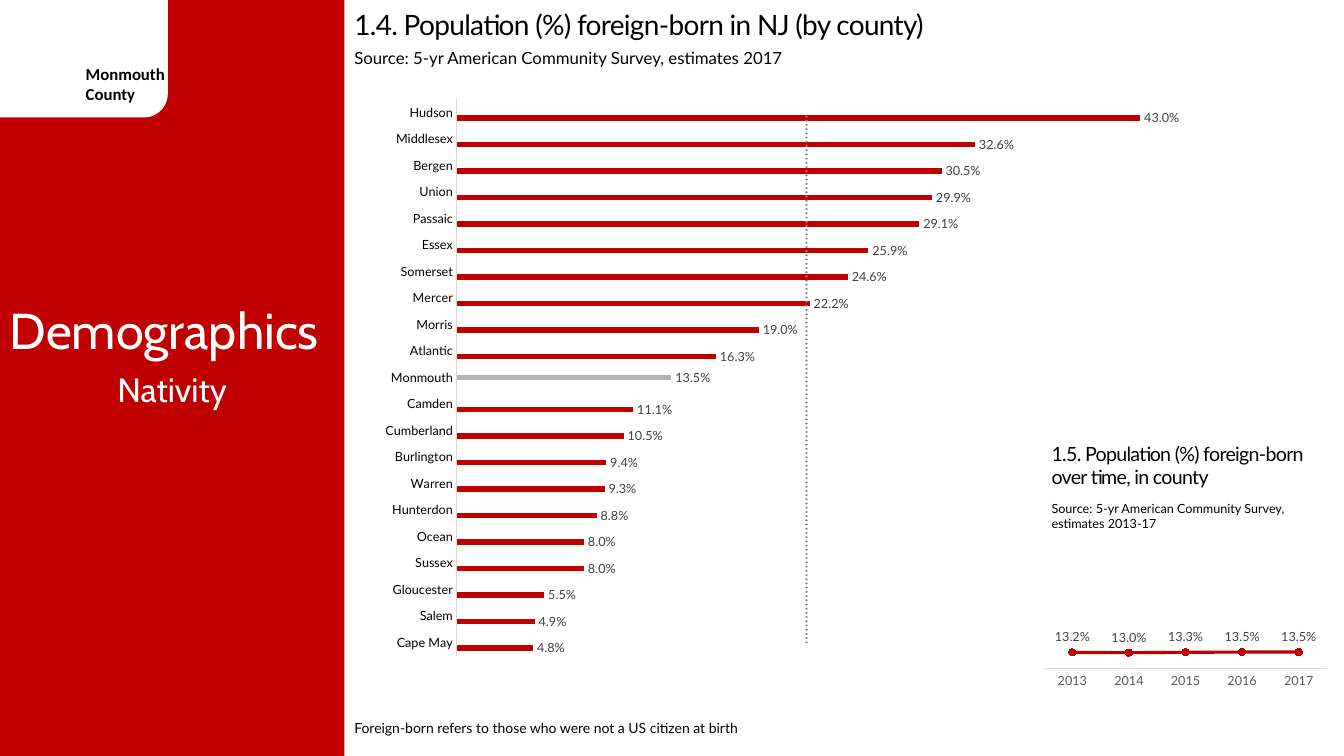
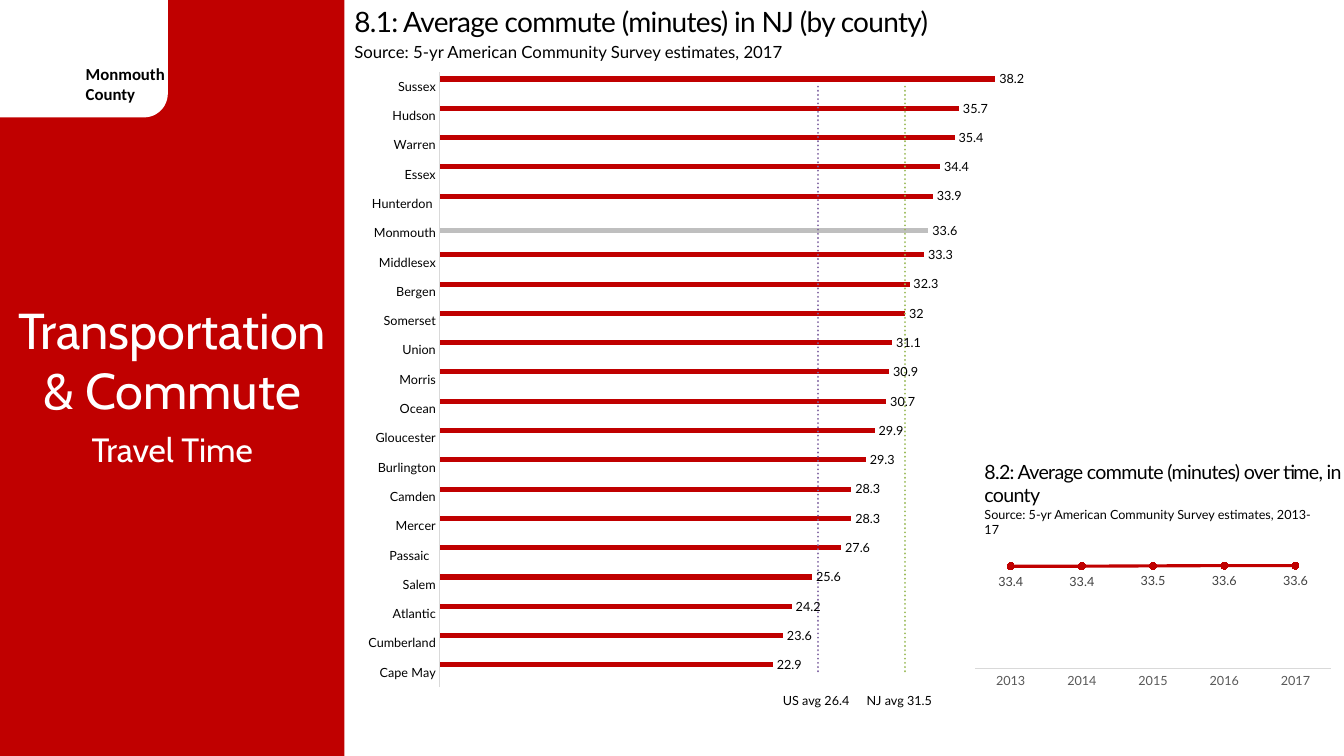
from collections import namedtuple

from lxml import etree
from pptx import Presentation
from pptx.chart.data import CategoryChartData
from pptx.dml.color import RGBColor
from pptx.enum.chart import XL_CHART_TYPE, XL_LABEL_POSITION, XL_MARKER_STYLE, XL_TICK_MARK
from pptx.enum.shapes import MSO_SHAPE
from pptx.enum.text import PP_ALIGN
from pptx.oxml import parse_xml
from pptx.oxml.ns import nsdecls, qn
from pptx.util import Cm, Pt

LEFT, CENTER = PP_ALIGN.LEFT, PP_ALIGN.CENTER
BAR, LINE = XL_CHART_TYPE.BAR_CLUSTERED, XL_CHART_TYPE.LINE_MARKERS
OUTSIDE, ABOVE, BELOW = (XL_LABEL_POSITION.OUTSIDE_END, XL_LABEL_POSITION.ABOVE,
                         XL_LABEL_POSITION.BELOW)
CIRCLE, NO_TICKS = XL_MARKER_STYLE.CIRCLE, XL_TICK_MARK.NONE
RECTANGLE, ROUNDED = MSO_SHAPE.RECTANGLE, MSO_SHAPE.ROUNDED_RECTANGLE

RED, WHITE, BLACK = "C00000", "FFFFFF", "000000"
LABEL_GRAY, YEAR_GRAY, AXIS_GRAY = "404040", "595959", "D9D9D9"
BODY_FONT, TOPIC_FONT, BADGE_FONT = "Lato", "Cabin", "Calibri"
SLIDE_WIDTH, SLIDE_HEIGHT, SIDEBAR_WIDTH = 33.87, 19.05, 8.68
YEARS = ["2013", "2014", "2015", "2016", "2017"]
FOCUS_COUNTY = "Monmouth"

Average = namedtuple("Average", "value color bar_fill")


class Box(namedtuple("Box", "left top width height")):
    """A region in centimetres."""

    def inner(self, left, top, width, height):
        return Box(self.left + left, self.top + top, width, height)

    def lengths(self):
        return [Cm(value) for value in self]


def color(hex_string):
    return RGBColor.from_string(hex_string)


def style_font(font, size, hex_color, name=BODY_FONT, bold=False):
    font.size, font.name, font.bold = Pt(size), name, bold
    font.color.rgb = color(hex_color)


def add_text(page, box, text, size, hex_color=BLACK, font=BODY_FONT, bold=False,
             align=LEFT, spacing=None):
    frame = page.shapes.add_textbox(*box.lengths()).text_frame
    frame.word_wrap = True
    frame.text = text
    para = frame.paragraphs[0]
    para.alignment = align
    for span in para.runs:
        style_font(span.font, size, hex_color, font, bold)
        if spacing is not None:
            span.font._element.set("spc", str(int(spacing * 100)))


def add_block(page, kind, box, fill):
    block = page.shapes.add_shape(kind, *box.lengths())
    block.shadow.inherit = False
    block.fill.solid()
    block.fill.fore_color.rgb = color(fill)
    block.line.fill.background()


# Chart helpers
def set_plot_layout(chart, layout):
    plot_area = chart._chartSpace.find(".//" + qn("c:plotArea"))
    previous = plot_area.find(qn("c:layout"))
    if previous is not None:
        plot_area.remove(previous)
    element = parse_xml(f"<c:layout {nsdecls('c')}><c:manualLayout/></c:layout>")
    settings = [("layoutTarget", "inner"), ("xMode", "edge"), ("yMode", "edge")]
    settings += zip("xywh", layout)
    for name, value in settings:
        etree.SubElement(element[0], qn("c:" + name)).set("val", str(value))
    plot_area.insert(0, element)


def add_trendline(series, hex_color):
    trend = parse_xml(
        f'<c:trendline {nsdecls("c", "a")}><c:spPr><a:ln w="{Pt(1.5)}" cap="rnd"><a:solidFill>'
        f'<a:srgbClr val="{hex_color}"/></a:solidFill><a:prstDash val="sysDot"/></a:ln></c:spPr>'
        '<c:trendlineType val="linear"/><c:dispRSqr val="0"/><c:dispEq val="0"/></c:trendline>')
    series._element.find(qn("c:cat")).addprevious(trend)


def add_labels(series, number_format, position, hex_color):
    labels = series.data_labels
    labels.show_value = True
    labels.number_format, labels.number_format_is_linked = number_format, False
    labels.position = position
    style_font(labels.font, 9, hex_color)


def add_chart(page, box, kind, categories, rows, maximum, layout, category_color):
    data = CategoryChartData()
    data.categories = categories
    for name, values in rows:
        data.add_series(name, values)
    chart = page.shapes.add_chart(kind, *box.lengths(), data).chart
    chart.has_title = chart.has_legend = False
    style_font(chart.font, 10, BLACK, BADGE_FONT)
    chart.plots[0].vary_by_categories = False
    values_axis, axis = chart.value_axis, chart.category_axis
    values_axis.minimum_scale, values_axis.maximum_scale = 0, maximum
    values_axis.has_major_gridlines = values_axis.visible = False
    axis.major_tick_mark = axis.minor_tick_mark = NO_TICKS
    axis.format.line.color.rgb = color(AXIS_GRAY)
    axis.format.line.width = Pt(0.75)
    style_font(axis.tick_labels.font, 9, category_color)
    set_plot_layout(chart, layout)
    return chart


def add_county_chart(page, box, name, counties, averages, maximum, layout,
                     number_format, label_color, focus_color, reverse=False):
    categories = [county for county, _ in counties]
    rows = [
        (name, [None if county == FOCUS_COUNTY else value for county, value in counties]),
        ("Series 2", [value if county == FOCUS_COUNTY else None for county, value in counties])]
    rows += [(f"Series {number}", [average.value] * len(counties))
             for number, average in enumerate(averages, 3)]
    chart = add_chart(page, box, BAR, categories, rows, maximum, layout, BLACK)
    chart.category_axis.reverse_order = reverse
    plot = chart.plots[0]
    plot.gap_width, plot.overlap = 182, 0
    bars = list(plot.series)
    fills = [RED, focus_color] + [average.bar_fill for average in averages]
    for series, fill in zip(bars, fills):
        series.invert_if_negative = False
        if fill is None:
            series.format.fill.background()
        else:
            series.format.fill.solid()
            series.format.fill.fore_color.rgb = color(fill)
    for series in bars[:2]:
        add_labels(series, number_format, OUTSIDE, label_color)
    for series, average in zip(bars[2:], averages):
        add_trendline(series, average.color)


def add_year_chart(page, box, values, maximum, layout, number_format, position):
    chart = add_chart(page, box, LINE, YEARS, [("Series 1", values)], maximum, layout, YEAR_GRAY)
    series = chart.plots[0].series[0]
    series.smooth = False
    series.format.line.color.rgb = color(RED)
    series.format.line.width = Pt(2.25)
    marker = series.marker
    marker.style, marker.size = CIRCLE, 5
    marker.format.fill.solid()
    marker.format.fill.fore_color.rgb = color(RED)
    marker.format.line.color.rgb = color(RED)
    add_labels(series, number_format, position, LABEL_GRAY)


# Regions
def add_sidebar(page, box, topic, subtopic, subtopic_top, align):
    add_block(page, RECTANGLE, box, RED)
    add_block(page, ROUNDED, box.inner(-0.85, -0.64, 5.08, 3.6), WHITE)
    add_text(page, box.inner(1.91, 1.48, 2.74, 1.27), "Monmouth County", 12,
             font=BADGE_FONT, bold=True)
    add_text(page, box.inner(0, 7.41, box.width, subtopic_top - 7.41), topic, 36, WHITE,
             TOPIC_FONT, align=align)
    add_text(page, box.inner(0, subtopic_top, box.width, 1.27), subtopic, 24, WHITE,
             TOPIC_FONT, align=CENTER)


def add_county_heading(page, box, title, source, source_top):
    add_text(page, box.inner(0, 0, box.width, 1.12), title, 20, spacing=-0.5)
    add_text(page, box.inner(0, source_top, box.width, 0.76), source, 12)


def add_year_heading(page, box, title, source, source_top, source_width):
    add_text(page, box.inner(0, 0, box.width, 1.47), title, 14, spacing=-0.5)
    add_text(page, box.inner(0, source_top, source_width, 1.02), source, 9)


# Slides
def build_nativity(page, box):
    add_sidebar(page, box.inner(0, 0, SIDEBAR_WIDTH, box.height),
                "Demographics", "Nativity", 9.17, LEFT)
    main = box.inner(SIDEBAR_WIDTH, 0.06, 22.86, 18.97)
    add_county_heading(page, main, "1.4. Population (%) foreign-born in NJ (by county)",
                       "Source: 5-yr American Community Survey, estimates 2017", 1.01)
    years = box.inner(26.25, 11, 7.62, 6.62)
    add_year_heading(page, years, "1.5. Population (%) foreign-born over time, in county",
                     "Source: 5-yr American Community Survey, estimates 2013-17", 1.5, 7.62)
    add_year_chart(page, years.inner(-0.22, 1.92, 7.62, 4.72),
                   [0.132, 0.13, 0.133, 0.135, 0.135], 1,
                   (0.037, 0.183, 0.936, 0.649), "0.0%", ABOVE)
    counties = [
        ("Cape May", 0.048), ("Salem", 0.049), ("Gloucester", 0.055), ("Sussex", 0.08),
        ("Ocean", 0.08), ("Hunterdon", 0.088), ("Warren", 0.093), ("Burlington", 0.094),
        ("Cumberland", 0.105), ("Camden", 0.111), ("Monmouth", 0.135), ("Atlantic", 0.163),
        ("Morris", 0.19), ("Mercer", 0.222), ("Somerset", 0.246), ("Essex", 0.259),
        ("Passaic", 0.291), ("Union", 0.299), ("Bergen", 0.305), ("Middlesex", 0.326),
        ("Hudson", 0.43)]
    add_county_chart(page, main.inner(0.62, 2.05, 22.58, 15.06), "% Foreign Born", counties,
                     [Average(0.22, "8C8C8C", None)], 0.5, (0.098, 0.026, 0.887, 0.931),
                     "0.0%", LABEL_GRAY, "B4B4B4")
    add_text(page, main.inner(0, 17.95, 17.91, 0.69),
             "Foreign-born refers to those who were not a US citizen at birth", 10)


def build_commute(page, box):
    add_sidebar(page, box.inner(0, 0, SIDEBAR_WIDTH, box.height),
                "Transportation & Commute", "Travel Time", 10.69, CENTER)
    main = box.inner(SIDEBAR_WIDTH, 0, 25.04, 19.05)
    add_county_heading(page, main, "8.1: Average commute (minutes) in NJ (by county)",
                       "Source: 5-yr American Community Survey estimates, 2017", 0.93)
    years = box.inner(24.56, 11.46, 9.96, 6.2)
    add_year_heading(page, years, "8.2: Average commute (minutes) over time, in county",
                     "Source: 5-yr American Community Survey estimates, 2013-17", 1.19, 9.02)
    counties = [
        ("Sussex", 38.2), ("Hudson", 35.7), ("Warren", 35.4), ("Essex", 34.4),
        ("Hunterdon ", 33.9), ("Monmouth", 33.6), ("Middlesex", 33.3), ("Bergen", 32.3),
        ("Somerset", 32), ("Union", 31.1), ("Morris", 30.9), ("Ocean", 30.7),
        ("Gloucester", 29.9), ("Burlington", 29.3), ("Camden", 28.3), ("Mercer", 28.3),
        ("Passaic  ", 27.6), ("Salem", 25.6), ("Atlantic", 24.2), ("Cumberland", 23.6),
        ("Cape May", 22.9)]
    averages = [Average(26, "8064A2", WHITE), Average(32, "9BBB59", WHITE)]
    add_county_chart(page, main.inner(0.23, 1.49, 19.05, 16.15), "Series 1", counties, averages,
                     45, (0.114, 0.02, 0.866, 0.96), "General", BLACK, "BFBFBF", reverse=True)
    add_year_chart(page, years.inner(0, 1.91, 9.37, 4.27), [33.4, 33.4, 33.5, 33.6, 33.6], 40,
                   (0, 0.091, 0.959, 0.725), "0.0", BELOW)
    for left, label in ((10.8, "US avg 26.4"), (12.91, "NJ avg 31.5")):
        add_text(page, main.inner(left, 17.34, 4.24, 0.64), label, 9)


def main():
    deck = Presentation()
    deck.slide_width, deck.slide_height = Cm(SLIDE_WIDTH), Cm(SLIDE_HEIGHT)
    for build in (build_nativity, build_commute):
        build(deck.slides.add_slide(deck.slide_layouts[6]),
              Box(0, 0, SLIDE_WIDTH, SLIDE_HEIGHT))
    deck.save("out.pptx")


if __name__ == "__main__":
    main()
